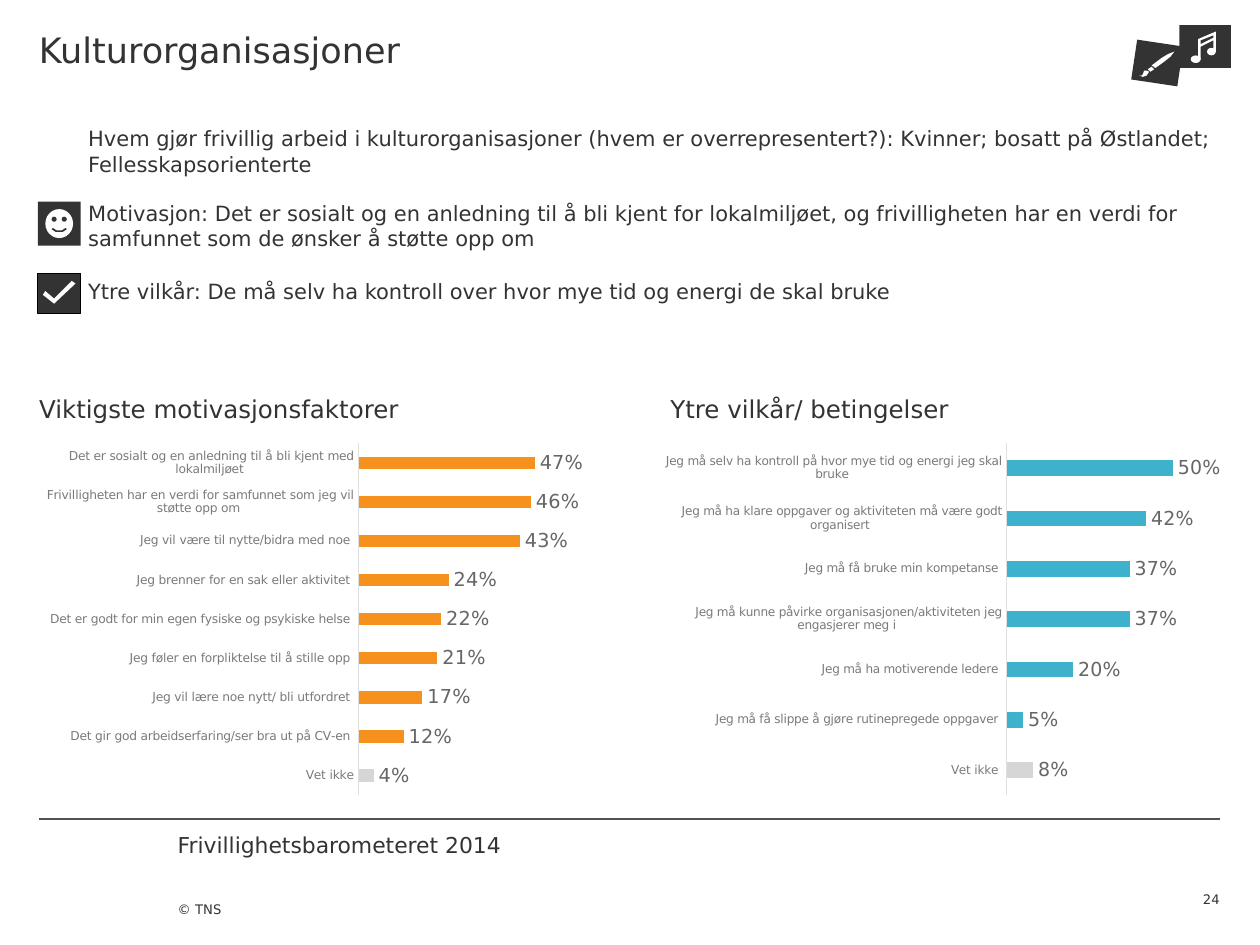
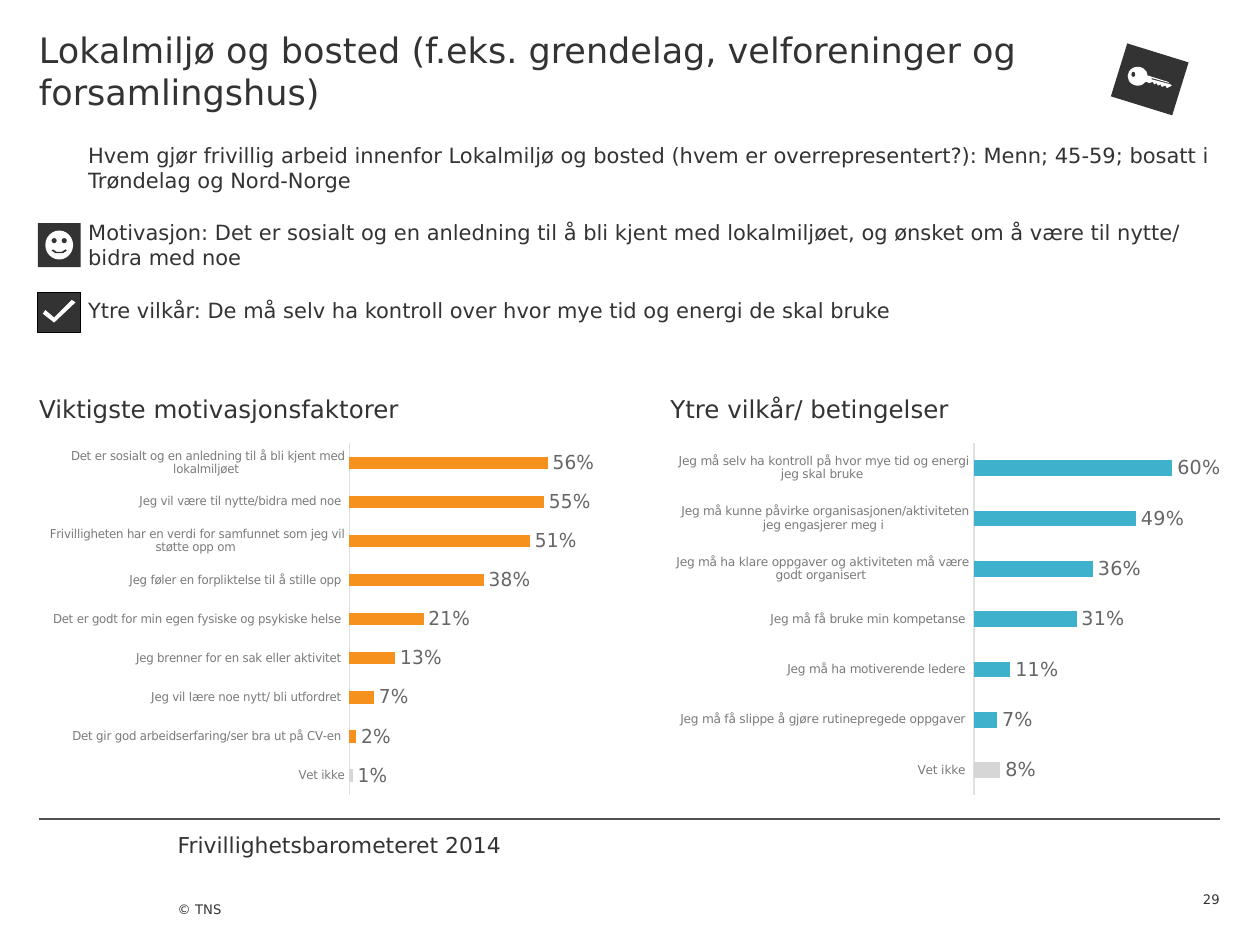
from lxml import etree
from pptx import Presentation
from pptx.chart.data import CategoryChartData as Data
from pptx.dml.color import RGBColor as RGB
from pptx.enum.chart import XL_CHART_TYPE as Chart, XL_LABEL_POSITION as Spot, XL_TICK_MARK as Tick
from pptx.enum.shapes import MSO_CONNECTOR as Link, MSO_SHAPE as Form
from pptx.enum.text import MSO_ANCHOR as Anchor, PP_ALIGN as Align
from pptx.oxml.ns import qn
from pptx.util import Inches, Pt

FONT = "DejaVu Sans"
HUE = {"ink": "333333", "rule": "525252", "white": "FFFFFF", "black": "000000",
       "axis": "E0E0E0", "names": "7A7A7A", "value": "666666",
       "why": "F7911E", "need": "3EB1CC", "unsure": "D6D6D6"}
HUE = {key: RGB.from_string(code) for key, code in HUE.items()}

WHY = [
    "Vet ikke",
    "Det gir god arbeidserfaring/ser bra ut på CV-en ",
    "Jeg vil lære noe nytt/ bli utfordret ",
    "Jeg føler en forpliktelse til å stille opp ",
    "Det er godt for min egen fysiske og psykiske helse ",
    "Jeg brenner for en sak eller aktivitet ",
    "Jeg vil være til nytte/bidra med noe ",
    "Frivilligheten har en verdi for samfunnet som jeg vil støtte opp om ",
    "Det er sosialt og en anledning til å bli kjent med lokalmiljøet ",
]
NEED = [
    "Vet ikke ",
    "Jeg må få slippe å gjøre rutinepregede oppgaver ",
    "Jeg må ha motiverende ledere ",
    "Jeg må kunne påvirke organisasjonen/aktiviteten jeg engasjerer meg i ",
    "Jeg må få bruke min kompetanse ",
    "Jeg må ha klare oppgaver og aktiviteten må være godt organisert ",
    "Jeg må selv ha kontroll på hvor mye tid og energi jeg skal bruke ",
]
TERMS = "Ytre vilkår: De må selv ha kontroll over hvor mye tid og energi de skal bruke"

# Outline points are hundredths of an inch.
NOTE = [[(951, 31), (951, 47), (953, 47), (953, 37), (963, 32), (963, 41), (965, 41), (965, 25)],
        [(963, 30), (953, 35), (953, 32), (963, 28)]]
BRUSH = [
    [[(914, 53), (911, 55), (913, 57), (916, 55)]],
    [[(910, 56), (908, 56), (907, 59), (906, 60), (904, 60), (907, 61), (910, 60), (912, 57)]],
    [[(932, 41), (927, 43), (922, 46), (914, 52), (917, 54), (924, 49), (929, 45)]],
]
KEY = [[(929, 67), (914, 63), (914, 62), (928, 66), (927, 65), (911, 60), (908, 60), (908, 65),
        (910, 65), (912, 66), (915, 65), (916, 67), (918, 66), (919, 68), (921, 67), (922, 69),
        (925, 68), (926, 70), (930, 68)]]
SMILE = [(41, 22), (42, 21), (45, 23), (49, 23), (52, 21), (53, 22), (50, 24), (44, 24)]
CHECK = [(57, 6), (43, 20), (36, 14), (34, 17), (43, 24), (60, 8)]

PAGES = [
    {
        "title": "Kulturorganisasjoner", "num": "24",
        "facts": [
            (1, "Hvem gjør frivillig arbeid i kulturorganisasjoner (hvem er overrepresentert?): "
                "Kvinner; bosatt på Østlandet; Fellesskapsorienterte"),
            (1.59, "Motivasjon: Det er sosialt og en anledning til å bli kjent for lokalmiljøet, og "
                   "frivilligheten har en verdi for samfunnet som de ønsker å støtte opp om"),
            (2.21, TERMS)],
        "face": 1.6, "check": 2.17,
        "why": (0.6, range(9), [4, 12, 17, 21, 22, 24, 43, 46, 47]),
        "need": (0.6, range(7), [8, 5, 20, 37, 37, 42, 50]),
        "marks": [(Form.RECTANGLE, (9.36, 0.2, 0.41, 0.34), 0, "ink"),
                  (Form.OVAL, (9.45, 0.44, 0.08, 0.06), 0, "white"),
                  (Form.OVAL, (9.58, 0.38, 0.07, 0.06), 0, "white"),
                  (Form.RECTANGLE, (9, 0.34, 0.37, 0.32), 8.5, "ink")],
        "cuts": [NOTE, *BRUSH],
    },
    {
        "title": "Lokalmiljø og bosted (f.eks. grendelag, velforeninger og forsamlingshus)", "num": "29",
        "facts": [
            (1.13, "Hvem gjør frivillig arbeid innenfor Lokalmiljø og bosted (hvem er "
                   "overrepresentert?): Menn; 45-59; bosatt i Trøndelag og Nord-Norge"),
            (1.74, "Motivasjon: Det er sosialt og en anledning til å bli kjent med lokalmiljøet, og "
                   "ønsket om å være til nytte/ bidra med noe"),
            (2.36, TERMS)],
        "face": 1.77, "check": 2.32,
        "why": (0.6, [0, 1, 2, 5, 4, 3, 7, 6, 8], [1, 2, 7, 13, 21, 38, 51, 55, 56]),
        "need": (0.7, [0, 1, 2, 4, 5, 3, 6], [8, 7, 11, 31, 36, 49, 60]),
        "marks": [(Form.RECTANGLE, (8.87, 0.41, 0.51, 0.44), 17.2, "ink"),
                  (Form.OVAL, (8.95, 0.53, 0.16, 0.15), 0, "white"),
                  (Form.OVAL, (8.98, 0.57, 0.03, 0.04), 0, "ink")],
        "cuts": [KEY],
    },
]


def style(font, size, hue):
    for key, val in {"name": FONT, "size": Pt(size), "bold": False}.items():
        setattr(font, key, val)
    font.color.rgb = HUE[hue]


def write(slide, text, box, size, top=0, base=0, anchor=Anchor.TOP, align=Align.LEFT):
    frame = slide.shapes.add_textbox(*map(Inches, box)).text_frame
    form = {"word_wrap": True, "vertical_anchor": anchor, "margin_left": 0, "margin_right": 0,
            "margin_top": Inches(top), "margin_bottom": Inches(base)}
    for key, val in form.items():
        setattr(frame, key, val)
    para = frame.paragraphs[0]
    para.alignment = align
    run = para.add_run()
    run.text = text
    style(run.font, size, "ink")


deck = Presentation()
deck.slide_width, deck.slide_height = Inches(10), Inches(7.5)

for page in PAGES:
    slide = deck.slides.add_slide(deck.slide_layouts[6])
    shapes = slide.shapes

    rule = shapes.add_connector(Link.STRAIGHT, *map(Inches, (0.31, 6.5, 9.68, 6.5)))
    rule.line.color.rgb = HUE["rule"]
    rule.line.width = Pt(0.75)
    etree.SubElement(rule._element.spPr, qn("a:effectLst"))
    write(slide, "Frivillighetsbarometeret 2014", (1.41, 6.6, 3.31, 0.42), 12.5)
    write(slide, "© TNS", (1.41, 6.92, 2.78, 0.58), 7.5, base=0.31, anchor=Anchor.BOTTOM)
    write(slide, page["num"], (9.13, 6.92, 0.55, 0.28), 7.5, anchor=Anchor.BOTTOM, align=Align.RIGHT)
    write(slide, page["title"], (0.31, 0, 9.37, 1.13), 20, top=0.23)

    for key, names, head, left, side in [
            ("why", WHY, "Viktigste motivasjonsfaktorer", 0.31, 0.31),
            ("need", NEED, "Ytre vilkår/ betingelser", 5.32, 5.28)]:
        write(slide, head, (left, 3.13, 4.41, 0.33), 14)
        peak, order, parts = page[key]
        data = Data(number_format="0%")
        data.categories = [names[i] for i in order]
        data.add_series("Series 1", [part / 100 for part in parts])
        chart = shapes.add_chart(Chart.BAR_CLUSTERED, *map(Inches, (side, 3.46, 4.41, 2.91)), data).chart
        chart.has_legend = chart.has_title = False
        style(chart.font, 10, "ink")

        axis = chart.category_axis
        axis.major_tick_mark = axis.minor_tick_mark = Tick.NONE
        axis.format.line.color.rgb = HUE["axis"]
        axis.format.line.width = Pt(0.75)
        style(axis.tick_labels.font, 7, "names")
        scale = {"minimum_scale": 0, "maximum_scale": peak, "major_unit": 0.1,
                 "has_major_gridlines": False, "visible": False}
        for name, val in scale.items():
            setattr(chart.value_axis, name, val)

        plot = chart.plots[0]
        plot.gap_width, plot.vary_by_categories = 219, False
        bars = plot.series[0]
        for part, hue in [(bars, key), (bars.points[0], "unsure")]:
            part.format.fill.solid()
            part.format.fill.fore_color.rgb = HUE[hue]
        labels = bars.data_labels
        form = {"show_value": True, "number_format": "0%", "number_format_is_linked": False,
                "position": Spot.OUTSIDE_END}
        for name, val in form.items():
            setattr(labels, name, val)
        style(labels.font, 11, "value")

    face, check = page["face"], page["check"]
    marks = page["marks"] + [
        (Form.RECTANGLE, (0.3, face, 0.34, 0.35), 0, "ink"),
        (Form.OVAL, (0.36, face + 0.06, 0.22, 0.23), 0, "white"),
        (Form.OVAL, (0.41, face + 0.12, 0.04, 0.04), 0, "ink"),
        (Form.OVAL, (0.49, face + 0.12, 0.04, 0.04), 0, "ink"),
        (Form.RECTANGLE, (0.3, check, 0.34, 0.32), 0, "ink")]
    for kind, box, turn, hue in marks:
        mark = shapes.add_shape(kind, *map(Inches, box))
        mark.rotation = turn
        mark.shadow.inherit = False
        mark.fill.solid()
        mark.fill.fore_color.rgb = HUE[hue]
        mark.line.fill.background()
    mark.line.color.rgb = HUE["black"]
    mark.line.width = Pt(0.75)

    cuts = [(loops, "white") for loops in page["cuts"]]
    for base, dots, hue in [(face, SMILE, "ink"), (check, CHECK, "white")]:
        cuts.append(([[(x, y + round(base * 100)) for x, y in dots]], hue))
    for loops, hue in cuts:
        pen = shapes.build_freeform(*loops[0][0], scale=Inches(0.01))
        pen.add_line_segments(loops[0][1:])
        for hole in loops[1:]:
            pen.move_to(*hole[0])
            pen.add_line_segments(hole[1:])
        cut = pen.convert_to_shape()
        cut.shadow.inherit = False
        cut.fill.solid()
        cut.fill.fore_color.rgb = HUE[hue]
        cut.line.fill.background()

    for top, fact in page["facts"]:
        write(slide, fact, (0.7, top, 8.95, 0.34), 12)

deck.save("out.pptx")
